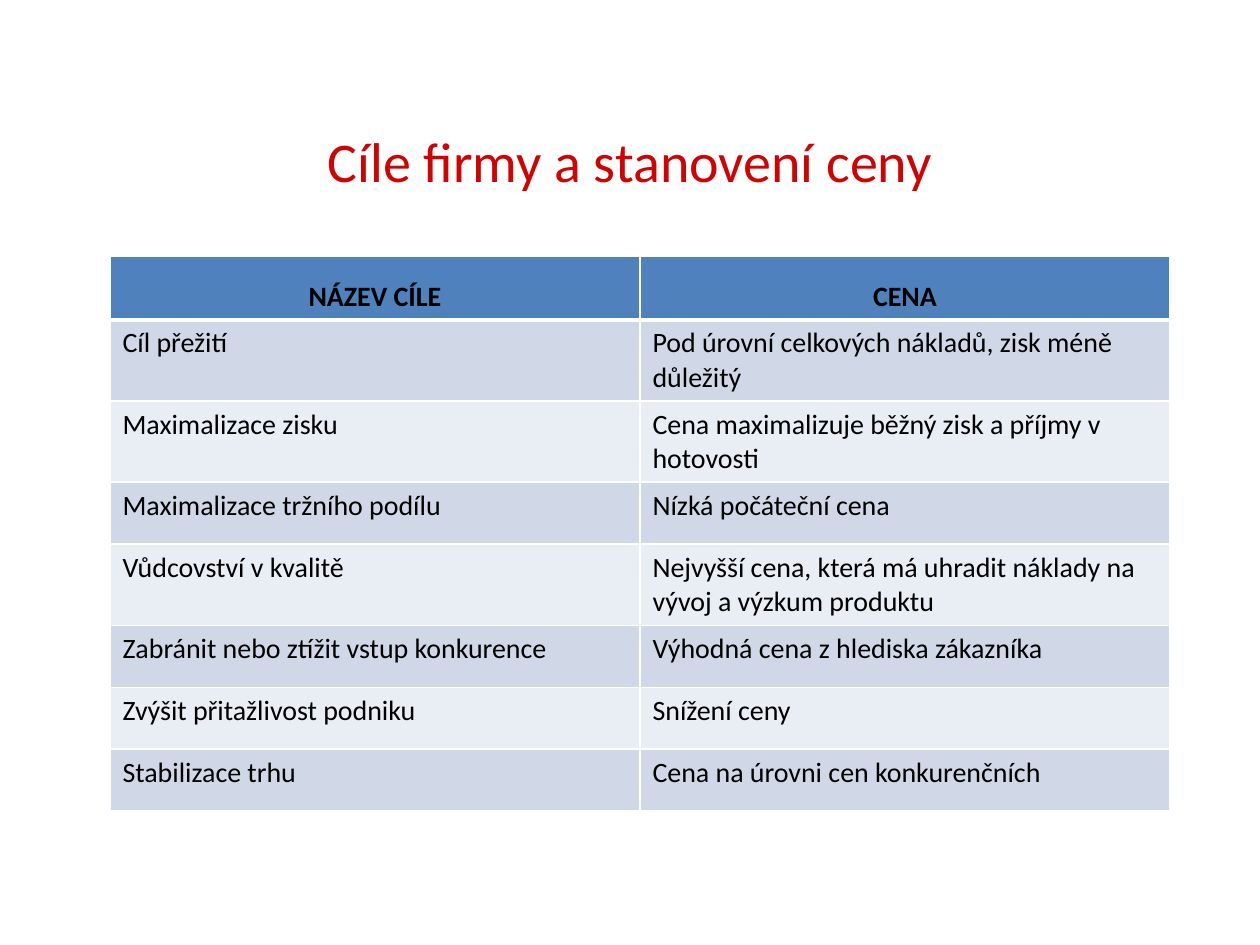
"""Builds a slide with a table of company goals and the prices that suit them."""
from dataclasses import dataclass

from lxml import etree
from pptx import Presentation
from pptx import util as u
from pptx.dml.color import RGBColor
from pptx.enum import text
from pptx.oxml import ns


@dataclass(frozen=True)
class Theme:
    font: str = "Calibri"
    red: str = "D10202"
    ink: str = "000000"
    head: str = "4F81BD"
    bands: tuple = ("D0D8E8", "E9EDF4")
    rule: str = "FFFFFF"
    big: int = 32
    body: int = 16


theme = Theme()
SCALE = 914400 / 126


def px(n):
    return u.Emu(round(n * SCALE))


def write(frame, words, size=theme.body, color=theme.ink, bold=False,
          align=text.PP_ALIGN.LEFT, space=1.0):
    par = frame.paragraphs[0]
    par.alignment = align
    par.line_spacing = space
    run = par.add_run()
    run.text = words
    run.font.name = theme.font
    run.font.size = u.Pt(size)
    run.font.bold = bold
    run.font.color.rgb = RGBColor.from_string(color)


deck = Presentation()
deck.slide_width, deck.slide_height = px(1260), px(945)
slide = deck.slides.add_slide(deck.slide_layouts[5])

title = slide.shapes.title
title.left, title.top, title.width, title.height = px(63), px(110), px(1134), px(101)
title.text_frame.vertical_anchor = text.MSO_ANCHOR.MIDDLE
write(title.text_frame, "Cíle firmy a stanovení ceny", size=theme.big,
      color=theme.red, align=text.PP_ALIGN.CENTER)

rows = [
    ("NÁZEV CÍLE", "CENA", 62),
    ("Cíl přežití", "Pod úrovní celkových nákladů, zisk méně důležitý", 74),
    ("Maximalizace zisku", "Cena maximalizuje běžný zisk a příjmy v hotovosti", 74),
    ("Maximalizace tržního podílu", "Nízká počáteční cena", 62),
    ("Vůdcovství v kvalitě",
     "Nejvyšší cena, která má uhradit náklady na vývoj a výzkum produktu", 74),
    ("Zabránit nebo ztížit vstup konkurence", "Výhodná cena z hlediska zákazníka", 62),
    ("Zvýšit přitažlivost podniku", "Snížení ceny", 62),
    ("Stabilizace trhu", "Cena na úrovni cen konkurenčních", 62),
]
high = sum(row[2] for row in rows)
table = slide.shapes.add_table(len(rows), 2, px(110), px(256), px(1060), px(high)).table
for col in table.columns:
    col.width = px(530)

for r, (goal, price, tall) in enumerate(rows):
    table.rows[r].height = px(tall)
    top = r == 0
    for c, words in enumerate((goal, price)):
        cell = table.cell(r, c)
        props = cell._tc.get_or_add_tcPr()
        for side in "LRTB":
            wide = 3 if top and side == "B" else 1
            line = etree.SubElement(props, ns.qn(f"a:ln{side}"), w=str(u.Pt(wide)))
            fill = etree.SubElement(line, ns.qn("a:solidFill"))
            etree.SubElement(fill, ns.qn("a:srgbClr"), val=theme.rule)
        cell.fill.solid()
        shade = theme.head if top else theme.bands[(r - 1) % 2]
        cell.fill.fore_color.rgb = RGBColor.from_string(shade)
        if top:
            write(cell.text_frame, words, bold=True, align=text.PP_ALIGN.CENTER, space=1.5)
        else:
            write(cell.text_frame, words)

deck.save("out.pptx")
